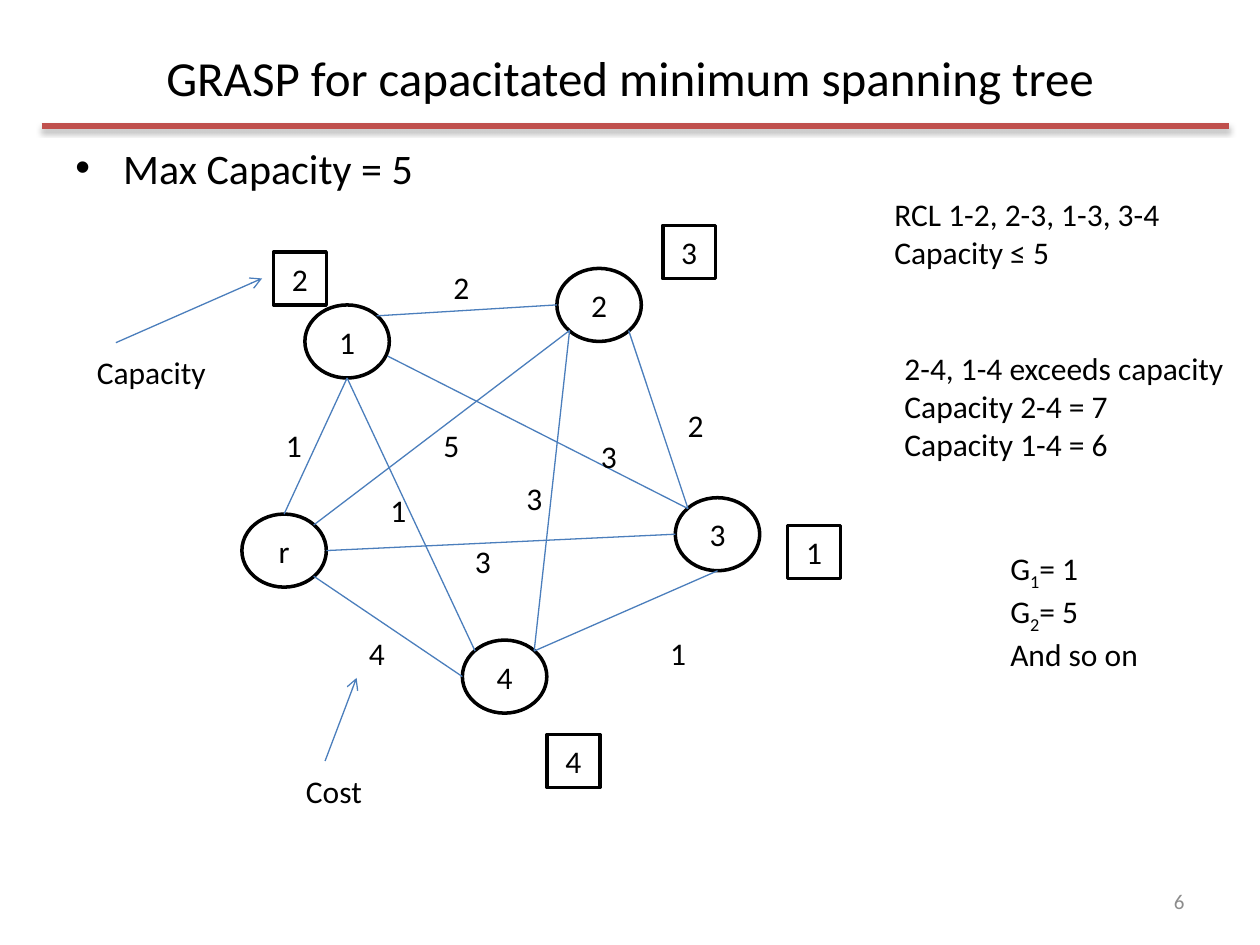
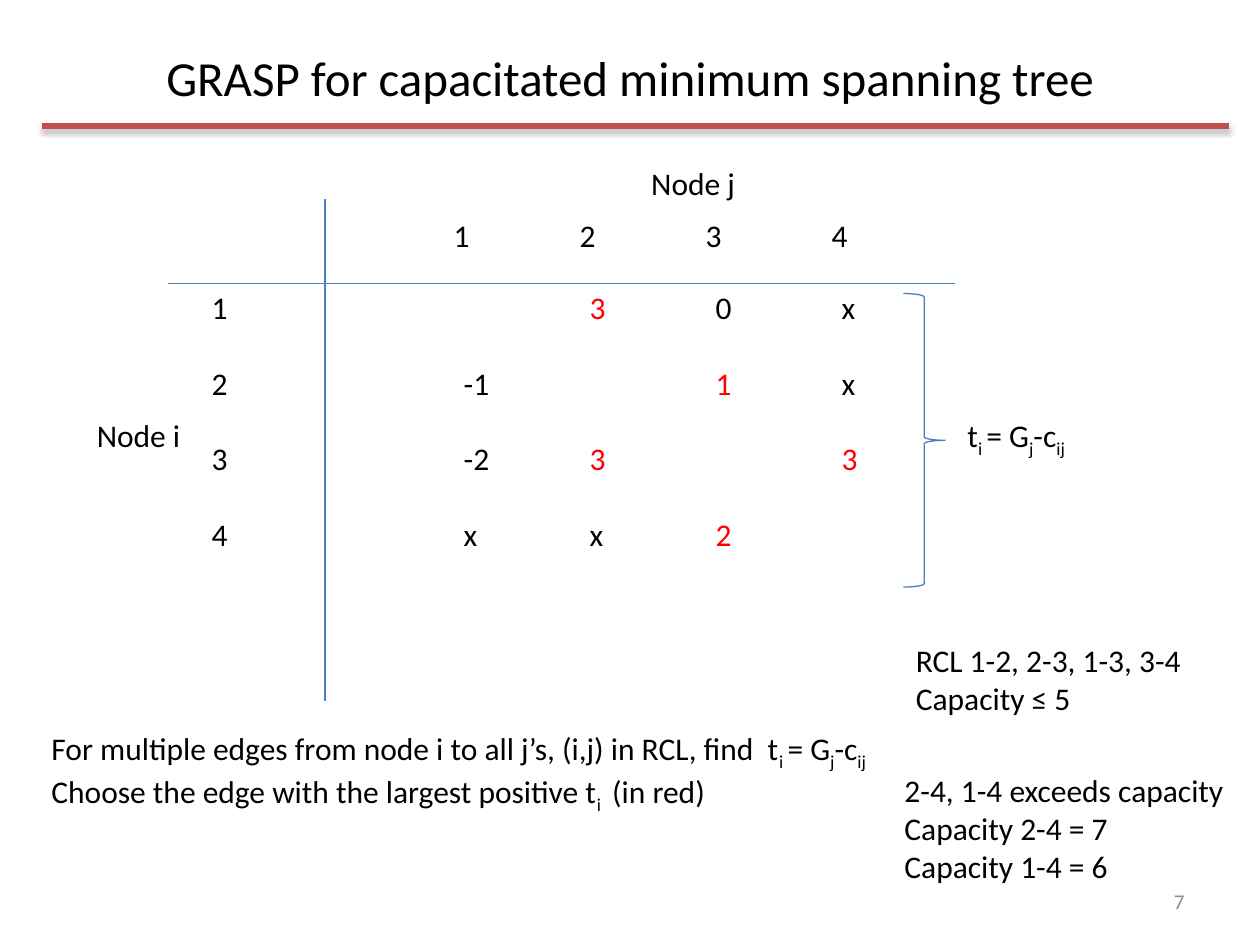
from lxml import etree
from pptx import Presentation
from pptx.dml.color import RGBColor
from pptx.enum.shapes import MSO_CONNECTOR, MSO_SHAPE
from pptx.enum.text import MSO_ANCHOR as Anchor, MSO_AUTO_SIZE as AutoSize, PP_ALIGN as Align
from pptx.oxml.ns import qn
from pptx.util import Inches, Pt

BLACK = RGBColor(0x00, 0x00, 0x00)
WHITE = RGBColor(0xFF, 0xFF, 0xFF)
GREY = RGBColor(0x8C, 0x8C, 0x8C)
BLUE = RGBColor(0x4B, 0x7E, 0xBC)
BRICK = RGBColor(0xC0, 0x50, 0x4D)
RED = RGBColor(0xFF, 0x00, 0x00)

TITLE = "GRASP for capacitated minimum spanning tree"
RCL_NOTE = ["RCL 1-2, 2-3, 1-3, 3-4", "Capacity ≤ 5"]
EXCESS_NOTE = ["2-4, 1-4 exceeds capacity", "Capacity 2-4 = 7", "Capacity 1-4 = 6"]
GAIN = "t|i |= G|j|-c|ij"
PLAIN_TABLE = "{2D5ABB26-0587-4C30-8999-92F81FD0307C}"

NODE_WIDTH, NODE_HEIGHT, DEMAND_SIZE = 0.67, 0.58, 0.42
NODES = {"r": (1.92, 4.08), "4": (3.67, 5.08), "3": (5.36, 3.95), "2": (4.42, 2.13), "1": (2.42, 2.42)}
DEMANDS = [("2", 2.17, 2), ("3", 5.26, 1.79), ("1", 6.25, 4.17), ("4", 4.34, 5.83)]

# Points on a node's rim, as fractions of its width and height
NEAR, FAR = 0.15, 0.85
RIM = {
    "top": (0.5, 0), "bottom": (0.5, 1), "left": (0, 0.5), "right": (1, 0.5),
    "top left": (NEAR, NEAR), "top right": (FAR, NEAR),
    "bottom left": (NEAR, FAR), "bottom right": (FAR, FAR), "lower right": (0.98, 0.7),
}
# Start node and rim, end node and rim, cost and its place
EDGES = [
    ("r", "top", "1", "bottom", "1", 2.17, 3.33),
    ("r", "top right", "2", "bottom left", "5", 3.42, 3.33),
    ("r", "right", "3", "left", "3", 3.67, 4.25),
    ("r", "bottom right", "4", "left", "4", 2.83, 4.98),
    ("1", "top right", "2", "left", "2", 3.5, 2.08),
    ("2", "bottom right", "3", "top left", "2", 5.36, 3.17),
    ("1", "lower right", "3", "top left", "3", 4.67, 3.42),
    ("3", "bottom", "4", "top right", "1", 5.22, 4.98),
    ("2", "bottom left", "4", "top right", "3", 4.08, 3.75),
    ("1", "bottom", "4", "top left", "1", 3, 3.85),
]

GAINS = [
    ["", "1", "2", "3", "4"],
    ["1", "", "3", "0", "x"],
    ["2", "-1", "", "1", "x"],
    ["3", "-2", "3", "", "3"],
    ["4", "x", "x", "2", ""],
]
LARGEST = {(1, 2), (2, 3), (3, 2), (3, 4), (4, 3)}


def assign(target, values):
    for name, value in values.items():
        setattr(target, name, value)


def rim_point(node, side):
    (left, top), (across, down) = NODES[node], RIM[side]
    return left + across * NODE_WIDTH, top + down * NODE_HEIGHT


class Deck:
    font = "Calibri"

    def __init__(self):
        self.show = Presentation()
        assign(self.show, {"slide_width": Inches(10), "slide_height": Inches(7.5)})
        self.slide = None

    def start_slide(self, number):
        self.slide = self.show.slides.add_slide(self.show.slide_layouts[6])
        self.title_rule()
        centred = {"vertical_anchor": Anchor.MIDDLE, "word_wrap": True}
        self.text([TITLE], 0.5, 0.3, 9, 0.62, centred, {"alignment": Align.CENTER}, size=28)
        self.text([number], 7.17, 6.95, 2.33, 0.4, centred, {"alignment": Align.RIGHT}, size=12, color=GREY)

    def title_rule(self):
        rule = self.line((0.33, 1), (9.75, 1), BRICK, 3)
        effects = rule._element.spPr.find(qn("a:effectLst"))
        shadow = etree.SubElement(effects, qn("a:outerShdw"), blurRad=str(Pt(3.1)), dist=str(Pt(1.8)),
                                  dir="5400000", rotWithShape="0")
        tint = etree.SubElement(shadow, qn("a:srgbClr"), val=str(BLACK))
        etree.SubElement(tint, qn("a:alpha"), val="35000")

    def add_runs(self, paragraph, text, size=18, color=BLACK):
        """Fill a paragraph; every second part between bars is a subscript."""
        for index, part in enumerate(text.split("|")):
            run = paragraph.add_run()
            run.text = part
            assign(run.font, {"name": self.font, "size": Pt(size)})
            run.font.color.rgb = color
            if index % 2:
                run._r.get_or_add_rPr().set("baseline", "-25000")

    def text(self, lines, left, top, width, height, frame_format=None, paragraph_format=None, **style):
        box = self.slide.shapes.add_textbox(Inches(left), Inches(top), Inches(width), Inches(height))
        frame = box.text_frame
        assign(frame, frame_format or {"word_wrap": False, "auto_size": AutoSize.SHAPE_TO_FIT_TEXT})
        for index, line in enumerate(lines):
            paragraph = frame.paragraphs[0] if index == 0 else frame.add_paragraph()
            assign(paragraph, paragraph_format or {})
            self.add_runs(paragraph, line, **style)
        return box

    def label(self, text, left, top, width=0.33):
        return self.text([text], left, top, width, 0.4)

    def bullet(self, text, left, top, width, height):
        box = self.text([text], left, top, width, height, {"word_wrap": True},
                        {"space_before": Pt(5)}, size=24)
        properties = box.text_frame.paragraphs[0]._p.get_or_add_pPr()
        properties.set("marL", str(Inches(0.38)))
        properties.set("indent", str(-Inches(0.38)))
        etree.SubElement(properties, qn("a:buFont"), typeface="Arial")
        etree.SubElement(properties, qn("a:buChar"), char="•")

    def outlined(self, kind, text, left, top, width, height):
        shape = self.slide.shapes.add_shape(kind, Inches(left), Inches(top), Inches(width), Inches(height))
        shape.shadow.inherit = False
        shape.fill.solid()
        shape.fill.fore_color.rgb = WHITE
        shape.line.color.rgb = BLACK
        shape.line.width = Pt(2)
        shape.text_frame.vertical_anchor = Anchor.MIDDLE
        paragraph = shape.text_frame.paragraphs[0]
        paragraph.alignment = Align.CENTER
        self.add_runs(paragraph, text)

    def brace(self, left, top, width, height):
        brace = self.slide.shapes.add_shape(MSO_SHAPE.RIGHT_BRACE, Inches(left), Inches(top),
                                            Inches(width), Inches(height))
        brace.shadow.inherit = False
        brace.fill.background()
        brace.line.color.rgb = BLUE
        brace.line.width = Pt(0.75)

    def line(self, start, end, color=BLUE, weight=0.75):
        ends = [Inches(value) for value in (*start, *end)]
        line = self.slide.shapes.add_connector(MSO_CONNECTOR.STRAIGHT, *ends)
        line.line.color.rgb = color
        line.line.width = Pt(weight)
        etree.SubElement(line._element.spPr, qn("a:effectLst"))
        return line

    def arrow(self, start, end):
        outline = self.line(start, end).line._get_or_add_ln()
        etree.SubElement(outline, qn("a:tailEnd"), type="arrow")

    def table(self, rows, highlights, left, top, widths, heights):
        frame = self.slide.shapes.add_table(len(rows), len(widths), Inches(left), Inches(top),
                                            Inches(sum(widths)), Inches(sum(heights)))
        table = frame.table
        assign(table, {"first_row": False, "horz_banding": False})
        table._tbl.tblPr.find(qn("a:tableStyleId")).text = PLAIN_TABLE
        for column, width in zip(table.columns, widths):
            column.width = Inches(width)
        for row, height in zip(table.rows, heights):
            row.height = Inches(height)
        for r, values in enumerate(rows):
            for c, value in enumerate(values):
                cell = table.cell(r, c)
                cell.fill.background()
                header = r == 0
                assign(cell, {"margin_left": Inches(0.02 if header else 0.1),
                              "margin_top": Inches(0.15 if header else 0.05)})
                self.add_runs(cell.text_frame.paragraphs[0], value,
                              color=RED if (r, c) in highlights else BLACK)


def build_network(deck):
    deck.start_slide("6")
    deck.bullet("Max Capacity = 5", 0.5, 1.08, 9, 5.83)
    for node, place in NODES.items():
        deck.outlined(MSO_SHAPE.OVAL, node, *place, NODE_WIDTH, NODE_HEIGHT)
    for demand, left, top in DEMANDS:
        deck.outlined(MSO_SHAPE.RECTANGLE, demand, left, top, DEMAND_SIZE, DEMAND_SIZE)
    for start, start_side, end, end_side, cost, left, top in EDGES:
        deck.line(rim_point(start, start_side), rim_point(end, end_side))
        deck.label(cost, left, top)
    deck.text(RCL_NOTE, 7, 1.5, 2.33, 0.71)
    deck.text(EXCESS_NOTE, 7.08, 2.72, 2.76, 1.01)
    deck.arrow((0.92, 2.72), (2.08, 2.21))
    deck.label("Capacity", 0.67, 2.75, 1.07)
    deck.arrow((2.58, 6.04), (2.83, 5.38))
    deck.label("Cost", 2.33, 6.08, 0.65)
    deck.text(["G|1|= 1", "G|2|= 5", "And so on"], 7.92, 4.31, 1.23, 1.01)


def build_gains(deck):
    deck.start_slide("7")
    deck.table(GAINS, LARGEST, 1.58, 1.58, [2, 1, 1, 1, 1], [0.67, 0.6, 0.6, 0.6, 0.6])
    deck.line((1.33, 2.25), (7.58, 2.25))
    deck.line((2.58, 1.58), (2.58, 5.56))
    deck.label("Node i", 0.67, 3.25, 0.87)
    deck.label("Node j", 5.07, 1.25, 0.88)
    deck.brace(7.17, 2.33, 0.33, 2.33)
    deck.label(GAIN, 7.58, 3.25, 1.01)
    deck.text(RCL_NOTE, 7.17, 5.04, 2.33, 0.71)
    deck.text(EXCESS_NOTE, 7.08, 6.07, 2.76, 1.01)
    deck.text([f"For multiple edges from node i to all j’s, (i,j) in RCL, find  {GAIN}",
               "Choose the edge with the largest positive t|i | (in red)"], 0.31, 5.74, 6.78, 0.71)


def main():
    deck = Deck()
    build_network(deck)
    build_gains(deck)
    deck.show.save("out.pptx")


if __name__ == "__main__":
    main()
